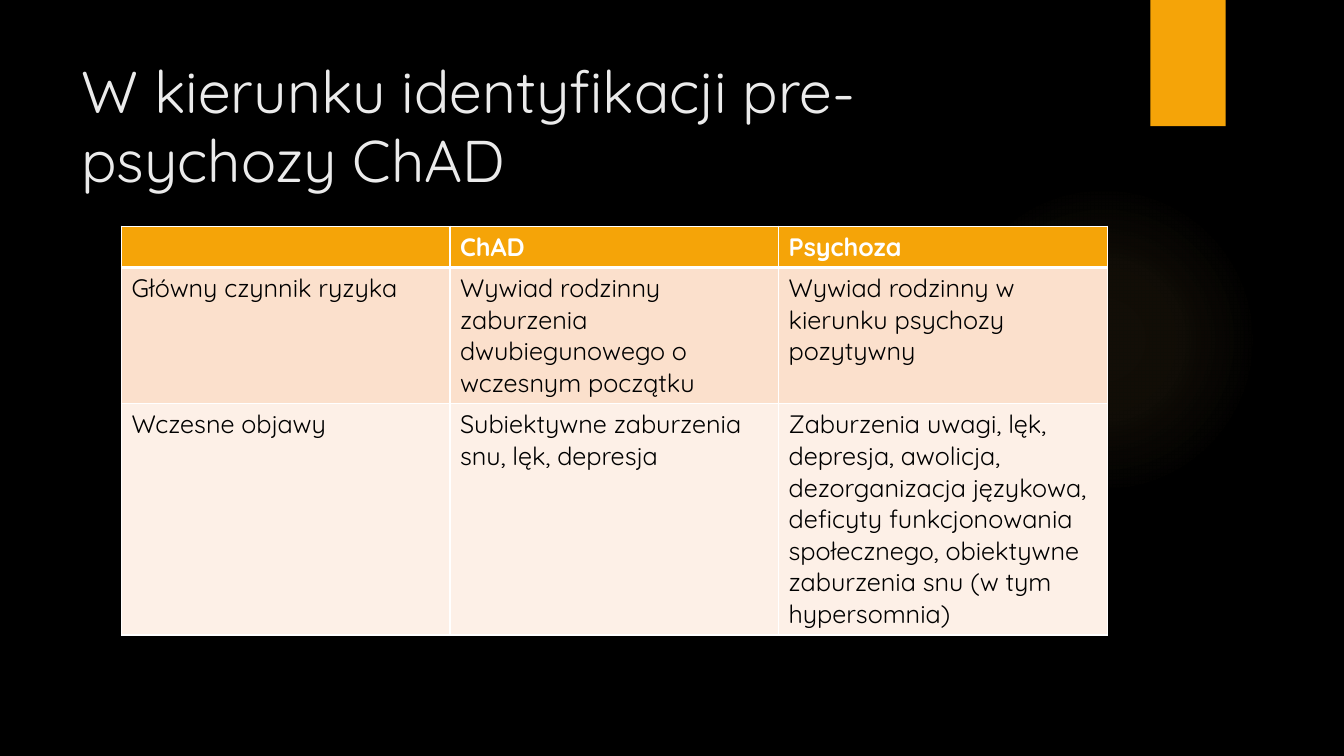
from lxml.etree import SubElement
from pptx import Presentation
from pptx.dml.color import RGBColor
from pptx.enum.shapes import MSO_SHAPE
from pptx.enum.text import MSO_ANCHOR
from pptx.oxml import parse_xml
from pptx.oxml.ns import nsdecls, qn
from pptx.util import Cm, Pt

FONT = "Quicksand"
COLORS = {
    "background": "000000",
    "accent": "F5A408",
    "glow": "FAC96A",
    "title": "EBEBEB",
    "white": "FFFFFF",
    "black": "000000",
    "band_dark": "FBE0CC",
    "band_light": "FDF0E7",
}
GLOW_STOPS = [(0, 7), (36, 6), (69, 0)]
ROWS = [
    ["", "ChAD", "Psychoza"],
    [
        "Główny czynnik ryzyka",
        "Wywiad rodzinny zaburzenia dwubiegunowego o wczesnym początku",
        "Wywiad rodzinny w kierunku psychozy pozytywny",
    ],
    [
        "Wczesne objawy",
        "Subiektywne zaburzenia snu, lęk, depresja",
        "Zaburzenia uwagi, lęk, depresja, awolicja, dezorganizacja językowa, "
        "deficyty funkcjonowania społecznego, obiektywne zaburzenia snu "
        "(w tym hypersomnia)",
    ],
]
ROW_FILLS = ["accent", "band_dark", "band_light"]
ROW_HEIGHTS = [1.04, 3.43, 5.83]


def rgb(name):
    """Return the palette colour with the given name."""
    return RGBColor.from_string(COLORS[name])


def write(tf, text, size=18, color="black", bold=False, spacing=None):
    """Write one formatted paragraph into a text frame."""
    tf.word_wrap = True
    p = tf.paragraphs[0]
    p.line_spacing = spacing
    p.font.size = Pt(size)
    if text:
        r = p.add_run()
        r.text = text
        r.font.name = FONT
        r.font.size = Pt(size)
        r.font.bold = bold
        r.font.color.rgb = rgb(color)


def add_plain_shape(s, kind, box):
    """Add a preset shape without line or shadow."""
    sp = s.shapes.add_shape(kind, *map(Cm, box))
    sp.shadow.inherit = False
    sp.line.fill.background()
    return sp


def add_glow(s, box):
    """Add the faint radial glow on the right."""
    sp = add_plain_shape(s, MSO_SHAPE.OVAL, box)
    stops = "".join(
        f'<a:gs pos="{pos * 1000}"><a:srgbClr val="{COLORS["glow"]}">'
        f'<a:alpha val="{alpha * 1000}"/></a:srgbClr></a:gs>'
        for pos, alpha in GLOW_STOPS
    )
    grad = parse_xml(
        f'<a:gradFill {nsdecls("a")} rotWithShape="1"><a:gsLst>{stops}</a:gsLst>'
        '<a:path path="circle"><a:fillToRect l="50000" t="50000" r="50000" b="50000"/>'
        "</a:path></a:gradFill>"
    )
    sp._element.spPr.find(qn("a:prstGeom")).addnext(grad)


def add_tab(s, box):
    """Add the accent tab hanging from the top edge."""
    sp = add_plain_shape(s, MSO_SHAPE.RECTANGLE, box)
    sp.fill.solid()
    sp.fill.fore_color.rgb = rgb("accent")


def add_title(s, box):
    """Add the slide title."""
    tf = s.shapes.add_textbox(*map(Cm, box)).text_frame
    tf.vertical_anchor = MSO_ANCHOR.MIDDLE
    write(tf, "W kierunku identyfikacji pre-psychozy ChAD",
          size=42, color="title", spacing=0.97)


def set_borders(cell, top, bottom):
    """Draw white cell borders with the given top and bottom widths."""
    tcPr = cell._tc.get_or_add_tcPr()
    widths = {"lnL": 1, "lnR": 1, "lnT": top, "lnB": bottom}
    for i, (side, width) in enumerate(widths.items()):
        ln = tcPr.makeelement(qn(f"a:{side}"), {"w": str(Pt(width))})
        fill = SubElement(ln, qn("a:solidFill"))
        SubElement(fill, qn("a:srgbClr"), val=COLORS["white"])
        tcPr.insert(i, ln)


def add_comparison(s, box):
    """Add the table comparing both disorders."""
    table = s.shapes.add_table(len(ROWS), len(ROWS[0]), *map(Cm, box)).table
    for col in table.columns:
        col.width = Cm(box[2] / len(ROWS[0]))
    for i, texts in enumerate(ROWS):
        table.rows[i].height = Cm(ROW_HEIGHTS[i])
        header = i == 0
        for j, text in enumerate(texts):
            cell = table.cell(i, j)
            cell.fill.solid()
            cell.fill.fore_color.rgb = rgb(ROW_FILLS[i])
            set_borders(cell, top=3 if i == 1 else 1, bottom=3 if header else 1)
            write(cell.text_frame, text, bold=header,
                  color="white" if header else "black")


def main():
    """Build and save the slide."""
    prs = Presentation()
    prs.slide_width, prs.slide_height = Cm(33.87), Cm(19.05)
    s = prs.slides.add_slide(prs.slide_layouts[6])
    s.background.fill.solid()
    s.background.fill.fore_color.rgb = rgb("background")
    add_glow(s, (23.9, 4.65, 7.82, 7.82))
    add_tab(s, (28.99, 0, 1.9, 3.18))
    add_title(s, (1.8, 1.27, 26.14, 3.89))
    add_comparison(s, (3.06, 5.7, 24.84, sum(ROW_HEIGHTS)))
    prs.save("out.pptx")


if __name__ == "__main__":
    main()
